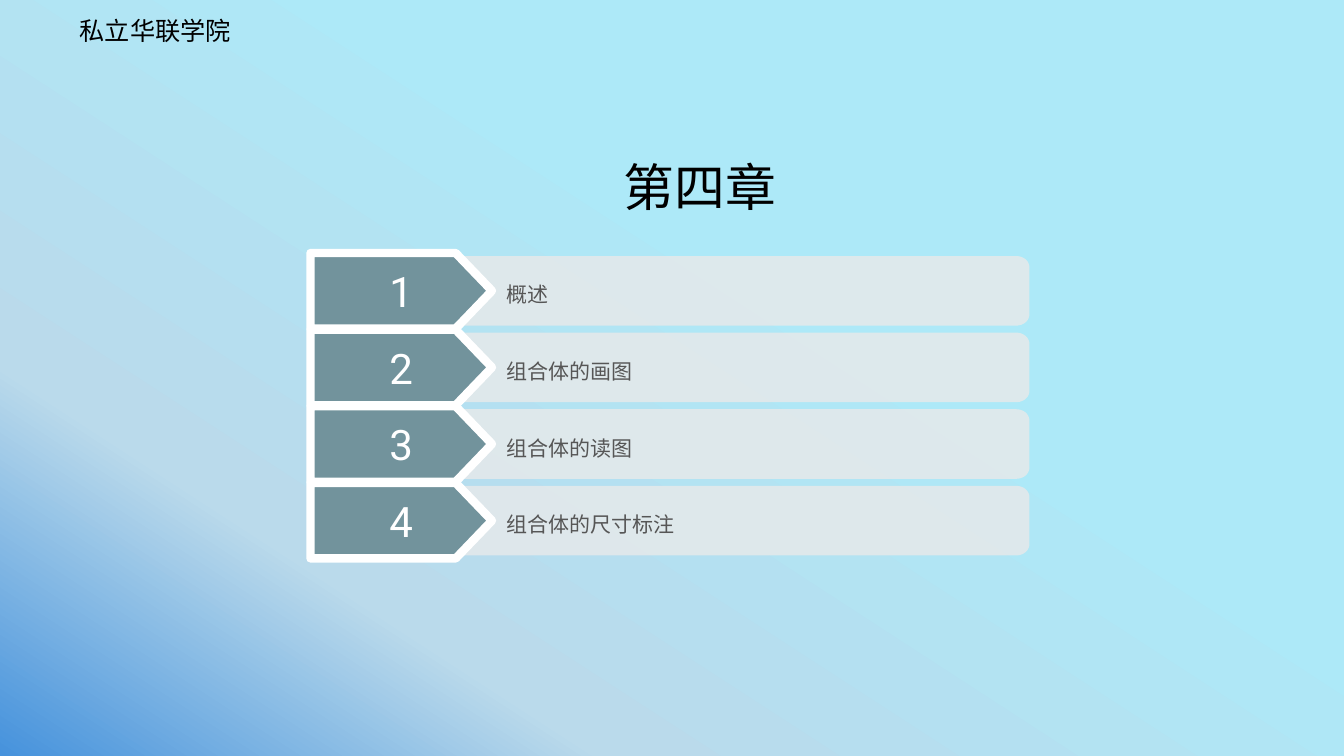
"""Build the chapter four contents slide with four numbered sections."""
from copy import deepcopy
from math import cos, pi, sin

from lxml.etree import SubElement
from pptx import Presentation
from pptx.dml.color import RGBColor
from pptx.enum.text import MSO_ANCHOR, MSO_AUTO_SIZE, PP_ALIGN
from pptx.oxml.ns import qn
from pptx.util import Inches, Pt

COLORS = {
    "blue": "4692DC", "haze": "BADAEB", "cyan": "ADE9F8",
    "bar": "E3E9EB", "arrow": "72939C",
    "white": "FFFFFF", "black": "000000", "gray": "565656",
}
SECTIONS = ["概述", "组合体的画图", "组合体的读图", "组合体的尺寸标注"]
FIRST_TOP, PITCH = 2.54, 0.76
BAR_LEFT, BAR_RIGHT, BAR_HEIGHT = 4.55, 10.21, 0.69
CORNER_WIDTH, CORNER_HEIGHT, CORNER_STEPS = 0.13, 0.11, 12
ARROW_LEFT, ARROW_SHOULDER, ARROW_TIP, ARROW_HEIGHT = 3.08, 4.52, 4.88, 0.75


def write_text(shape, text, size, color, font="Roboto", align=PP_ALIGN.LEFT,
               anchor=MSO_ANCHOR.TOP, insets=(0.1, 0.05, 0.1, 0.05), spacing=1.0):
    frame = shape.text_frame
    frame.text = text
    frame.word_wrap = True
    frame.auto_size = MSO_AUTO_SIZE.NONE
    frame.vertical_anchor = anchor
    (frame.margin_left, frame.margin_top,
     frame.margin_right, frame.margin_bottom) = map(Inches, insets)
    paragraph = frame.paragraphs[0]
    paragraph.alignment = align
    paragraph.line_spacing = spacing
    run = paragraph.runs[0]
    run.font.size = Pt(size)
    run.font.color.rgb = RGBColor.from_string(COLORS[color])
    run.font.name = font
    SubElement(run.font._element, qn("a:ea"), typeface="Noto Sans CJK JP")


def add_outline(points, color):
    corners = [(Inches(x), Inches(y)) for x, y in points]
    builder = slide.shapes.build_freeform(*corners[0])
    builder.add_line_segments(corners[1:], close=True)
    shape = builder.convert_to_shape()
    shape.shadow.inherit = False
    shape.fill.solid()
    shape.fill.fore_color.rgb = RGBColor.from_string(COLORS[color])
    return shape


presentation = Presentation()
presentation.slide_width = Inches(13.33)
presentation.slide_height = Inches(7.5)
slide = presentation.slides.add_slide(presentation.slide_layouts[5])

background = slide.background.fill
background.gradient()
background.gradient_angle = 57
stop_list = slide.element.find(".//" + qn("a:gsLst"))
stop_list.append(deepcopy(stop_list[-1]))
stops = zip(background.gradient_stops, [(0, "blue"), (0.24, "haze"), (0.62, "cyan")])
for stop, (position, color) in stops:
    stop.position = position
    stop.color.rgb = RGBColor.from_string(COLORS[color])

header = slide.shapes.add_textbox(Inches(0.74), Inches(0.1), Inches(2.94), Inches(0.4))
write_text(header, "私立华联学院", 18, "black", font="Noto Sans CJK JP", insets=(0.05,) * 4)

for index, section in enumerate(SECTIONS):
    top = FIRST_TOP + index * PITCH
    bottom = top + BAR_HEIGHT
    quarter = [pi / 2 * step / CORNER_STEPS for step in range(CORNER_STEPS + 1)]
    arc = [(BAR_RIGHT - CORNER_WIDTH * (1 - sin(angle)),
            CORNER_HEIGHT * (1 - cos(angle))) for angle in quarter]
    bar = add_outline(
        [(BAR_LEFT, top)]
        + [(x, top + drop) for x, drop in arc]
        + [(x, bottom - drop) for x, drop in reversed(arc)]
        + [(BAR_LEFT, bottom)], "bar")
    bar.line.fill.background()
    bar_color = bar.element.spPr.find(qn("a:solidFill"))[0]
    SubElement(bar_color, qn("a:alpha"), val="90000")
    write_text(bar, section, 15, "gray", anchor=MSO_ANCHOR.MIDDLE,
               insets=(0.47, 0, 0, 0), spacing=1.3)

    middle = top + BAR_HEIGHT / 2
    arrow_top, arrow_bottom = middle - ARROW_HEIGHT / 2, middle + ARROW_HEIGHT / 2
    arrow = add_outline(
        [(ARROW_LEFT, arrow_top), (ARROW_SHOULDER, arrow_top), (ARROW_TIP, middle),
         (ARROW_SHOULDER, arrow_bottom), (ARROW_LEFT, arrow_bottom)], "arrow")
    arrow.line.color.rgb = RGBColor.from_string(COLORS["white"])
    arrow.line.width = Pt(6)
    write_text(arrow, str(index + 1), 30, "white", align=PP_ALIGN.CENTER,
               anchor=MSO_ANCHOR.MIDDLE)

title = slide.shapes.title
title.left, title.top = Inches(3.99), Inches(1.66)
title.width, title.height = Inches(5.91), Inches(0.57)
write_text(title, "第四章", 36.3, "black", align=PP_ALIGN.CENTER, spacing=0.7)

presentation.save("out.pptx")
